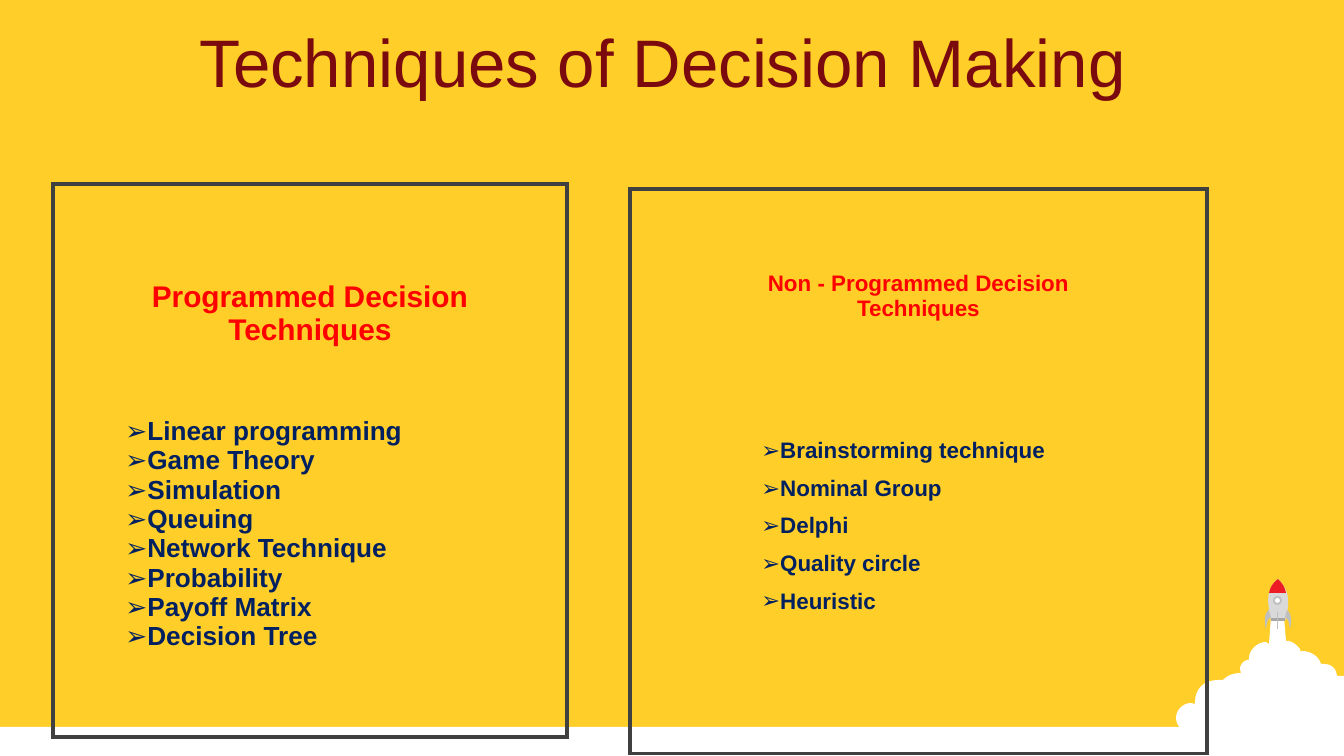
"""Builds the slide comparing programmed and non-programmed decision techniques."""
import lxml.etree
import pptx
import pptx.dml.color
import pptx.enum.shapes
import pptx.enum.text
import pptx.oxml.ns
import pptx.util

PX = 914400 / 134.4
THEME = {
    "font": "Arial", "background": "FFCE29", "title": "7B0A0E", "heading": "FF0000",
    "item": "002060", "frame": "404040", "cloud": "FFFFFF", "body": "D9D9D9",
    "band": "A6A6A6", "nose": "ED1C24", "fin": "BFBFBF",
    "title_size": 36, "frame_width": 2.25,
}
color = pptx.dml.color.RGBColor.from_string
qn = pptx.oxml.ns.qn
preset = pptx.enum.shapes.MSO_SHAPE
anchor = pptx.enum.text.MSO_ANCHOR
center = pptx.enum.text.PP_ALIGN.CENTER

deck = pptx.Presentation()
deck.slide_width, deck.slide_height = round(1344 * PX), round(756 * PX)
slide = deck.slides.add_slide(deck.slide_layouts[6])
slide.background.fill.solid()
slide.background.fill.fore_color.rgb = color(THEME["background"])


def paint(part, fill):
    part.shadow.inherit = False
    part.fill.solid()
    part.fill.fore_color.rgb = color(THEME[fill])
    part.line.fill.background()
    return part


def write(paragraph, text, size, ink, bold):
    run = paragraph.add_run()
    run.text = text
    run.font.name = THEME["font"]
    run.font.size = pptx.util.Pt(size)
    run.font.bold = bold
    run.font.color.rgb = color(THEME[ink])


ground = slide.shapes.add_shape(preset.RECTANGLE, 0, round(727 * PX), deck.slide_width, round(32 * PX))
paint(ground, "cloud")

cloud = [
    (1271, 617), (1284, 617), (1286, 641), (1289, 641), (1293, 642, 1297, 645, 1300, 649),
    (1301, 652), (1302, 651), (1310, 651, 1319, 656, 1321, 664), (1325, 664),
    (1331, 664, 1336, 668, 1337, 675), (1337, 676), (1344, 676), (1344, 753), (1341, 753),
    (1336, 753, 1331, 751, 1327, 749), (1325, 747), (1324, 749),
    (1321, 750, 1318, 751, 1314, 751), (1310, 751, 1308, 749, 1305, 746), (1302, 745),
    (1300, 750, 1296, 751, 1290, 751), (1287, 751, 1282, 750, 1279, 747), (1278, 746), (1275, 747),
    (1270, 751, 1263, 754, 1255, 754), (1241, 754, 1233, 747, 1227, 741),
    (1224, 743, 1219, 745, 1215, 743), (1210, 742, 1202, 739, 1200, 732), (1199, 731),
    (1198, 732, 1195, 732, 1191, 732), (1183, 732, 1176, 726, 1176, 718),
    (1176, 710, 1183, 703, 1191, 703), (1195, 704), (1195, 702),
    (1195, 689, 1204, 680, 1218, 680), (1223, 680), (1224, 679),
    (1228, 675, 1234, 673, 1241, 673), (1240, 669), (1240, 665, 1243, 661, 1247, 660),
    (1249, 660), (1249, 657), (1250, 649, 1258, 642, 1266, 642), (1269, 644),
]
body = [(1271, 621), (1269, 609, 1263, 591, 1278, 579), (1293, 593, 1288, 610, 1285, 621)]
band = [(1271, 618), (1285, 618), (1285, 621), (1271, 621)]
nose = [(1278, 579), (1282, 583, 1285, 587, 1286, 593), (1269, 593), (1270, 587, 1273, 583, 1278, 579)]
left_fin = [(1269, 610), (1271, 617), (1266, 620, 1267, 626, 1266, 629), (1265, 625, 1263, 614, 1269, 610)]
right_fin = [tuple(2556 - v if i % 2 == 0 else v for i, v in enumerate(step)) for step in left_fin]

for outline, fill in [(cloud, "cloud"), (body, "body"), (band, "band"), (nose, "nose"),
                      (left_fin, "fin"), (right_fin, "fin")]:
    steps = [[round(v * PX) for v in step] for step in outline]
    builder = slide.shapes.build_freeform(*steps[0], scale=1.0)
    builder.add_line_segments([step[-2:] for step in steps[1:]], close=True)
    piece = paint(builder.convert_to_shape(), fill)
    for segment, step in zip(list(piece._element.iter(qn("a:lnTo"))), steps[1:]):
        if len(step) == 6:
            segment.tag = qn("a:cubicBezTo")
            segment.remove(segment[0])
            for x, y in zip(step[::2], step[1::2]):
                lxml.etree.SubElement(segment, qn("a:pt"), x=str(x - piece.left), y=str(y - piece.top))

window = slide.shapes.add_shape(preset.OVAL, *(round(v * PX) for v in (1274, 597, 7, 7)))
paint(window, "cloud")
window.line.color.rgb = color(THEME["fin"])
window.line.width = pptx.util.Pt(1)
center_fin = slide.shapes.add_shape(preset.RECTANGLE, *(round(v * PX) for v in (1277, 612, 1, 17)))
paint(center_fin, "fin")

title = slide.shapes.add_textbox(0, round(18 * PX), deck.slide_width, round(85 * PX)).text_frame
title.word_wrap = True
title.vertical_anchor = anchor.MIDDLE
title.paragraphs[0].alignment = center
write(title.paragraphs[0], "Techniques of Decision Making ", THEME["title_size"], "title", False)

panels = [
    {"left": 53, "top": 184, "columns": (59, 396, 59), "rows": (87, 80, 53, 273, 53),
     "heading": "Programmed Decision Techniques", "heading_size": 16, "item_size": 14, "spacing": 1.0,
     "items_anchor": anchor.TOP,
     "items": ["Linear programming", "Game Theory", "Simulation", "Queuing", "Network Technique",
               "Probability", "Payoff Matrix", "Decision Tree"]},
    {"left": 630, "top": 189, "columns": (118, 341, 118), "rows": (66, 82, 52, 258, 105),
     "heading": "Non - Programmed Decision Techniques", "heading_size": 12, "item_size": 12, "spacing": 1.5,
     "items_anchor": anchor.MIDDLE,
     "items": ["Brainstorming technique", "Nominal Group", "Delphi", "Quality circle", "Heuristic"]},
]
for panel in panels:
    widths, heights = panel["columns"], panel["rows"]
    box = (panel["left"], panel["top"], sum(widths), sum(heights))
    grid = slide.shapes.add_table(len(heights), len(widths), *(round(v * PX) for v in box)).table
    grid.first_row = grid.horz_banding = False
    for column, width in zip(grid.columns, widths):
        column.width = round(width * PX)
    for row, height in zip(grid.rows, heights):
        row.height = round(height * PX)
    for r in range(len(heights)):
        for c in range(len(widths)):
            cell = grid.cell(r, c)
            cell.vertical_anchor = anchor.MIDDLE
            properties = cell._tc.get_or_add_tcPr()
            edges = {"L": c == 0, "R": c == len(widths) - 1, "T": r == 0, "B": r == len(heights) - 1}
            for side, framed in edges.items():
                edge = lxml.etree.SubElement(properties, qn("a:ln" + side))
                if framed:
                    edge.set("w", str(pptx.util.Pt(THEME["frame_width"])))
                    ink = lxml.etree.SubElement(edge, qn("a:solidFill"))
                    lxml.etree.SubElement(ink, qn("a:srgbClr"), val=THEME["frame"])
                else:
                    lxml.etree.SubElement(edge, qn("a:noFill"))
            cell.fill.background()
    heading = grid.cell(1, 1).text_frame.paragraphs[0]
    heading.alignment = center
    write(heading, panel["heading"], panel["heading_size"], "heading", True)
    grid.cell(3, 1).vertical_anchor = panel["items_anchor"]
    techniques = grid.cell(3, 1).text_frame
    for n, item in enumerate(panel["items"]):
        entry = techniques.add_paragraph() if n else techniques.paragraphs[0]
        entry.line_spacing = panel["spacing"]
        layout = entry._p.get_or_add_pPr()
        layout.set("marL", "0")
        layout.set("indent", "0")
        lxml.etree.SubElement(layout, qn("a:buFont"), typeface=THEME["font"])
        lxml.etree.SubElement(layout, qn("a:buChar"), char="➢")
        write(entry, item, panel["item_size"], "item", True)

deck.save("out.pptx")
